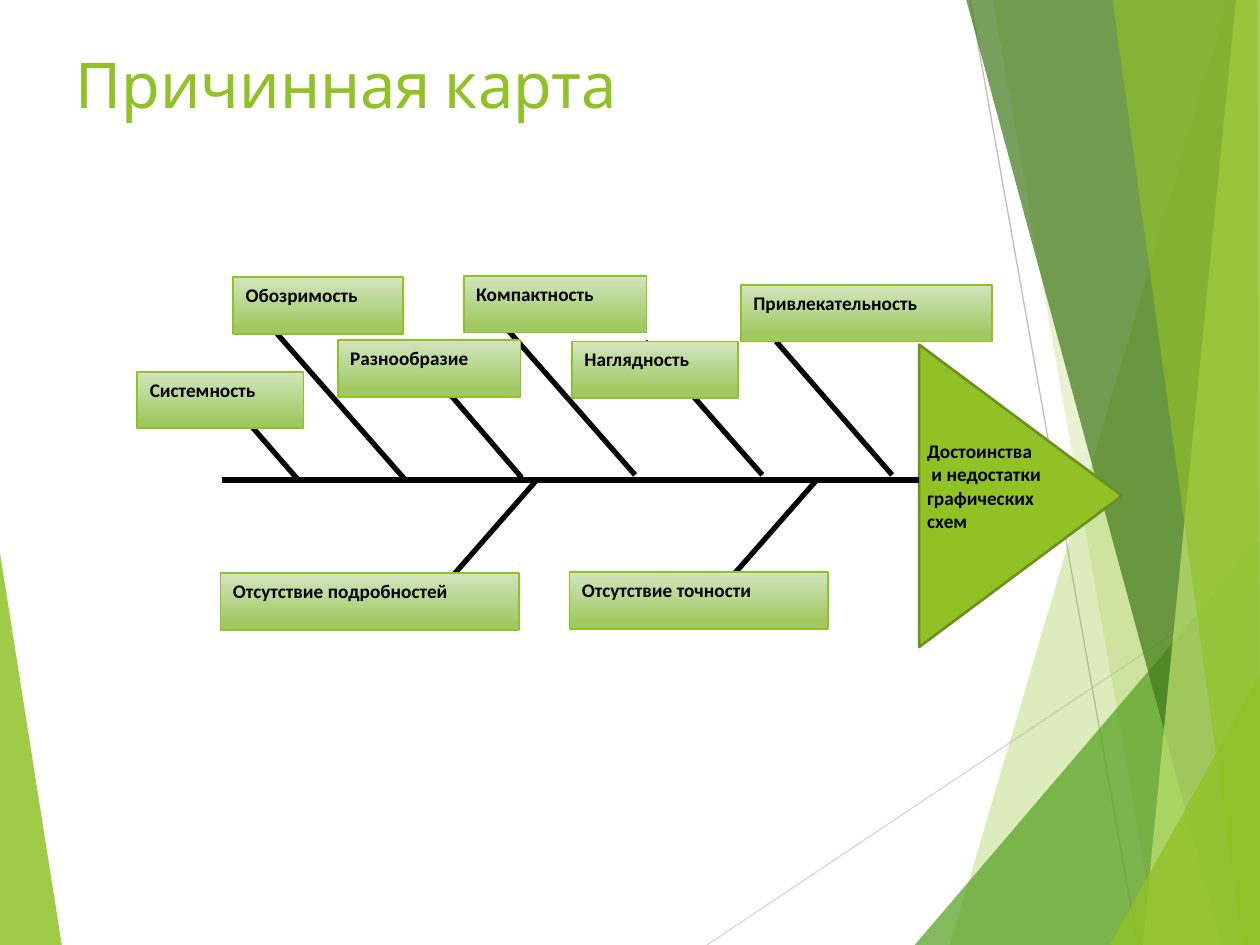
from lxml import etree
from pptx import Presentation
from pptx.dml.color import RGBColor
from pptx.enum.shapes import MSO_CONNECTOR, MSO_SHAPE
from pptx.enum.text import MSO_ANCHOR, PP_ALIGN
from pptx.oxml.ns import qn
from pptx.util import Pt

STRAIGHT = MSO_CONNECTOR.STRAIGHT
RECTANGLE = MSO_SHAPE.RECTANGLE
TRIANGLE = MSO_SHAPE.ISOSCELES_TRIANGLE
LEFT = PP_ALIGN.LEFT
TOP = MSO_ANCHOR.TOP
MIDDLE = MSO_ANCHOR.MIDDLE

WIDTH, HEIGHT = 720, 540
BOX_HEIGHT = 32.4
SPINE_Y = 274.3
GREEN = "90C226"
BLACK = "000000"

TITLE_FONT = {"name": "Cabin", "size": Pt(36), "bold": False}
LABEL_FONT = {"name": "Calibri", "size": Pt(11), "bold": True}

BACKGROUND_LINES = [
    ((404, 540), (720, 329), "D9D9D9"),
    ((554.4, 0), (650.2, 540), "BFBFBF"),
]
BACKGROUND_FACETS = [
    ([(0, 316), (35.3, 540), (0, 540)], GREEN, 85),
    ([(702, 0), (542.9, 540), (720, 540), (720, 0)], GREEN, 30),
    ([(567.4, 0), (661.7, 540), (720, 540), (720, 0)], GREEN, 20),
    ([(522.7, 540), (720, 308.9), (720, 540)], "54A021", 72),
    ([(552.2, 0), (698.4, 540), (720, 540), (720, 0)], "3F7819", 70),
    ([(706.3, 0), (653, 540), (720, 540), (720, 0)], "C0E474", 70),
    ([(635.8, 0), (709.9, 540), (720, 540), (718.6, 0)], GREEN, 65),
    ([(634.3, 540), (720, 385.2), (720, 540)], GREEN, 80),
]
BONES = [
    ((126.7, SPINE_Y), (524.9, SPINE_Y)),
    ((443.5, 195.1), (509.8, 271.4)),
    ((368.6, 195.1), (435.6, 271.4)),
    ((290.9, 189.4), (362.9, 271.4)),
    ((231.8, 195.8), (298.1, 272.9)),
    ((306.7, SPINE_Y), (239.8, 350.6)),
    ((467.3, 273.6), (400.3, 349.9)),
    ((231.1, 273.6), (158.4, 190.8)),
    ((169.9, 273.6), (135.4, 234)),
]
CAUSES = [
    ("Наглядность", 326.9, 195.1, 95),
    ("Компактность", 265, 157.7, 104.4),
    ("Обозримость", 133.2, 158.4, 97.2),
    ("Разнообразие", 193, 194.4, 104.4),
    ("Привлекательность", 423.4, 162.7, 143.3),
    ("Отсутствие точности", 325.4, 326.9, 147.6),
    ("Отсутствие подробностей", 126, 327.6, 170.6),
    ("Системность", 78.5, 212.4, 95),
]


def color(value):
    return RGBColor.from_string(value)


def points(*values):
    return [Pt(value) for value in values]


def write_text(shape, text, font_values, text_color, anchor, space_after):
    frame = shape.text_frame
    frame.word_wrap = True
    frame.vertical_anchor = anchor
    frame.text = text
    paragraph = frame.paragraphs[0]
    paragraph.alignment = LEFT
    paragraph.space_after = Pt(space_after)
    for run in paragraph.runs:
        for name, value in font_values.items():
            setattr(run.font, name, value)
        run.font.color.rgb = color(text_color)


def set_line(shape, line_color, width):
    shape.line.color.rgb = color(line_color)
    shape.line.width = Pt(width)


def add_title(slide, text):
    title = slide.shapes.title
    title.left, title.top, title.width, title.height = points(36, 21.6, 648, 51.8)
    write_text(title, text, TITLE_FONT, GREEN, MIDDLE, 0)


def add_line(slide, start, end, line_color, width):
    connector = slide.shapes.add_connector(STRAIGHT, *points(*start, *end))
    set_line(connector, line_color, width)
    etree.SubElement(connector._element.spPr, qn("a:effectLst"))


def add_facet(slide, corners, fill_color, opacity):
    first, *others = [points(*corner) for corner in corners]
    builder = slide.shapes.build_freeform(*first)
    builder.add_line_segments(others, close=True)
    facet = builder.convert_to_shape()
    facet.shadow.inherit = False
    facet.line.fill.background()
    facet.fill.solid()
    facet.fill.fore_color.rgb = color(fill_color)
    fill_element = facet._element.spPr.find(".//" + qn("a:srgbClr"))
    etree.SubElement(fill_element, qn("a:alpha"), val=str(opacity * 1000))


def add_head(slide, text):
    head = slide.shapes.add_shape(TRIANGLE, *points(496.8, 225.4, 172.8, 115.9))
    head.rotation = 90
    head.shadow.inherit = False
    head.fill.solid()
    head.fill.fore_color.rgb = color(GREEN)
    set_line(head, "6B901C", 1.5)
    label = slide.shapes.add_textbox(*points(522.7, 247.7, 107.3, 95.8))
    write_text(label, text, LABEL_FONT, BLACK, TOP, 10)


def add_cause(slide, text, left, top, width):
    box = slide.shapes.add_shape(RECTANGLE, *points(left, top, width, BOX_HEIGHT))
    box.shadow.inherit = False
    box.fill.gradient()
    box.fill.gradient_angle = 270
    stops = [(0, "D3E5BE"), (0.88, "A0C962")]
    for stop, (position, stop_color) in zip(box.fill.gradient_stops, stops):
        stop.position = position
        stop.color.rgb = color(stop_color)
    set_line(box, GREEN, 1)
    write_text(box, text, LABEL_FONT, BLACK, TOP, 10)


def main():
    presentation = Presentation()
    presentation.slide_width, presentation.slide_height = points(WIDTH, HEIGHT)
    slide = presentation.slides.add_slide(presentation.slide_layouts[5])
    add_title(slide, "Причинная карта")
    for start, end, line_color in BACKGROUND_LINES:
        add_line(slide, start, end, line_color, 0.75)
    for facet in BACKGROUND_FACETS:
        add_facet(slide, *facet)
    add_head(slide, "Достоинства\v и недостатки\vграфических\vсхем")
    for start, end in BONES:
        add_line(slide, start, end, BLACK, 3)
    for cause in CAUSES:
        add_cause(slide, *cause)
    presentation.save("out.pptx")


if __name__ == "__main__":
    main()
